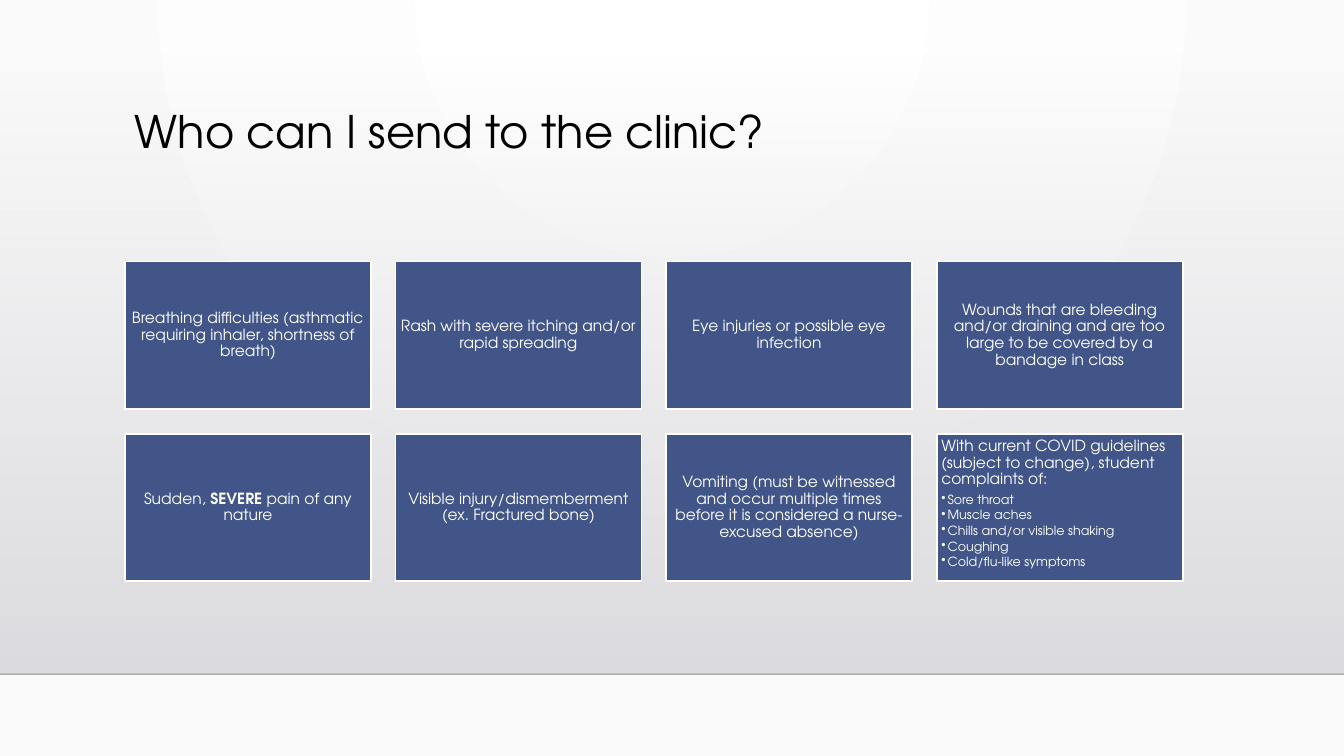
from dataclasses import dataclass

from lxml import etree
from pptx import Presentation
from pptx.dml.color import RGBColor
from pptx.enum.shapes import MSO_CONNECTOR, MSO_SHAPE
from pptx.enum.text import MSO_ANCHOR, PP_ALIGN
from pptx.oxml.ns import qn
from pptx.util import Pt

RECTANGLE = MSO_SHAPE.RECTANGLE
STRAIGHT = MSO_CONNECTOR.STRAIGHT
TOP, MIDDLE = MSO_ANCHOR.TOP, MSO_ANCHOR.MIDDLE
LEFT, CENTER = PP_ALIGN.LEFT, PP_ALIGN.CENTER


@dataclass(frozen=True)
class Theme:
    font: str = "TeX Gyre Adventor"
    white: RGBColor = RGBColor(0xFF, 0xFF, 0xFF)
    floor: RGBColor = RGBColor(0xFA, 0xFA, 0xFA)
    wall_top: RGBColor = RGBColor(0xDC, 0xDC, 0xE0)
    wall_bottom: RGBColor = RGBColor(0xDE, 0xDE, 0xE2)
    horizon: RGBColor = RGBColor(0x00, 0x00, 0x01)
    title: RGBColor = RGBColor(0x00, 0x00, 0x00)
    tile: RGBColor = RGBColor(0x41, 0x55, 0x88)
    title_size: int = 32
    tile_size: int = 11
    symptom_size: int = 9


THEME = Theme()
SLIDE_WIDTH, SLIDE_HEIGHT = 960, 540
HORIZON_Y = 481.5

# Tile grid
COLUMNS = 4
GRID_LEFT, GRID_TOP = 89.3, 186.8
TILE_WIDTH, TILE_HEIGHT, TILE_GAP = 175.7, 105.4, 17.57
TILE_INSET = 3.3

# Each reason is a list of (text, bold) runs
REASONS = [
    [("Breathing difficulties (asthmatic requiring inhaler, shortness of breath)", False)],
    [("Rash with severe itching and/or rapid spreading", False)],
    [("Eye injuries or possible eye infection", False)],
    [("Wounds that are bleeding and/or draining and are too large to be covered "
      "by a bandage in class", False)],
    [("Sudden, ", False), ("SEVERE", True), (" pain of any nature", False)],
    [("Visible injury/dismemberment (ex. Fractured bone)", False)],
    [("Vomiting (must be witnessed and occur multiple times before it is considered "
      "a nurse-excused absence)", False)],
    [("With current COVID guidelines (subject to change), student complaints of:", False)],
]
SYMPTOMS = [
    "Sore throat",
    "Muscle aches",
    "Chills and/or visible shaking",
    "Coughing",
    "Cold/flu-like symptoms",
]


def set_alpha(color_element, percent):
    etree.SubElement(color_element, qn("a:alpha"), val=str(percent * 1000))


def set_gradient(fill, first, last):
    fill.gradient()
    for stop, color in zip(fill.gradient_stops, (first, last)):
        stop.color.rgb = color


def add_background(slide):
    fill = slide.background.fill
    set_gradient(fill, THEME.white, THEME.floor)
    # Turn the linear gradient into a circular one centred on the top edge
    linear = next(slide.background._cSld.iter(qn("a:lin")))
    circle = etree.Element(qn("a:path"))
    circle.set("path", "circle")
    etree.SubElement(circle, qn("a:fillToRect"), l="43000", t="0", r="43000", b="100000")
    linear.getparent().replace(linear, circle)


def add_wall(slide):
    top = 36.7
    wall = slide.shapes.add_shape(
        RECTANGLE, Pt(0), Pt(top), Pt(SLIDE_WIDTH), Pt(HORIZON_Y - top))
    wall.shadow.inherit = False
    wall.line.fill.background()
    set_gradient(wall.fill, THEME.wall_top, THEME.wall_bottom)
    wall.fill.gradient_angle = 270
    set_alpha(next(wall._element.spPr.iter(qn("a:srgbClr"))), 0)


def add_horizon(slide):
    line = slide.shapes.add_connector(
        STRAIGHT, Pt(0), Pt(HORIZON_Y), Pt(SLIDE_WIDTH), Pt(HORIZON_Y))
    line.line.width = Pt(1)
    line.line.color.rgb = THEME.horizon
    properties = line._element.spPr
    set_alpha(next(properties.iter(qn("a:srgbClr"))), 20)
    etree.SubElement(properties, qn("a:effectLst"))


def format_paragraph(paragraph, size, color, alignment=LEFT, space_after=0.0):
    paragraph.alignment = alignment
    paragraph.line_spacing = 0.9
    paragraph.space_after = Pt(space_after)
    paragraph.font.name = THEME.font
    paragraph.font.size = Pt(size)
    paragraph.font.color.rgb = color


def add_title(slide, text):
    box = slide.shapes.add_textbox(Pt(89.3), Pt(74.9), Pt(756), Pt(82.8))
    frame = box.text_frame
    frame.word_wrap = True
    frame.text = text
    format_paragraph(frame.paragraphs[0], THEME.title_size, THEME.title)


def add_tile(slide, index, runs, anchor=MIDDLE, alignment=CENTER):
    row, column = divmod(index, COLUMNS)
    tile = slide.shapes.add_shape(
        RECTANGLE,
        Pt(GRID_LEFT + column * (TILE_WIDTH + TILE_GAP)),
        Pt(GRID_TOP + row * (TILE_HEIGHT + TILE_GAP)),
        Pt(TILE_WIDTH), Pt(TILE_HEIGHT))
    tile.shadow.inherit = False
    tile.fill.solid()
    tile.fill.fore_color.rgb = THEME.tile
    tile.line.color.rgb = THEME.white
    tile.line.width = Pt(1.25)

    frame = tile.text_frame
    frame.word_wrap = True
    frame.vertical_anchor = anchor
    frame.margin_left = frame.margin_right = Pt(TILE_INSET)
    frame.margin_top = frame.margin_bottom = Pt(TILE_INSET)
    paragraph = frame.paragraphs[0]
    for text, bold in runs:
        run = paragraph.add_run()
        run.text = text
        if bold:
            run.font.bold = True
    format_paragraph(paragraph, THEME.tile_size, THEME.white, alignment, 3.85)
    return frame


def add_bullet(frame, text):
    paragraph = frame.add_paragraph()
    paragraph.text = text
    paragraph.level = 1
    properties = paragraph._p.get_or_add_pPr()
    indent = Pt(4.5)
    properties.set("marL", str(indent))
    properties.set("indent", str(-indent))
    etree.SubElement(properties, qn("a:buChar"), char="•")
    format_paragraph(paragraph, THEME.symptom_size, THEME.white, space_after=1.35)


def main():
    presentation = Presentation()
    presentation.slide_width = Pt(SLIDE_WIDTH)
    presentation.slide_height = Pt(SLIDE_HEIGHT)
    slide = presentation.slides.add_slide(presentation.slide_layouts[6])

    # Backdrop
    add_background(slide)
    add_wall(slide)
    add_horizon(slide)

    # Title and reasons
    add_title(slide, "Who can I send to the clinic?")
    *plain_reasons, covid_reason = REASONS
    for index, runs in enumerate(plain_reasons):
        add_tile(slide, index, runs)

    # Last tile lists the symptoms
    frame = add_tile(slide, len(plain_reasons), covid_reason, TOP, LEFT)
    for symptom in SYMPTOMS:
        add_bullet(frame, symptom)

    presentation.save("out.pptx")


if __name__ == "__main__":
    main()
